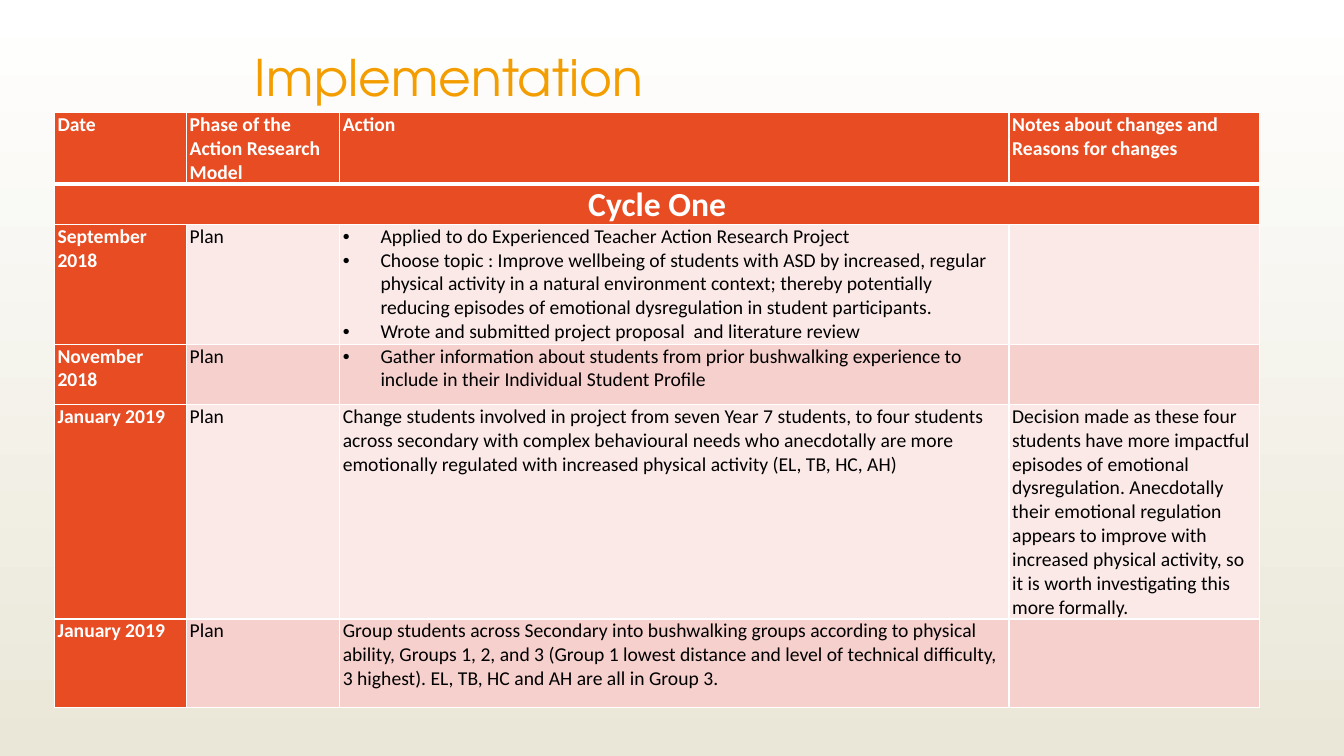
from dataclasses import dataclass

from lxml import etree
from pptx import Presentation
from pptx.dml.color import RGBColor
from pptx.enum.text import MSO_ANCHOR, PP_ALIGN
from pptx.oxml.ns import qn
from pptx.util import Cm, Pt

TOP = MSO_ANCHOR.TOP
LEFT, CENTER = PP_ALIGN.LEFT, PP_ALIGN.CENTER


@dataclass(frozen=True)
class Theme:
    title: str = "F49D00"
    accent: str = "E84C22"
    bands: tuple = ("FBE9E8", "F6D0CD")
    text: str = "000000"
    white: str = "FFFFFF"
    backdrop: tuple = ("FFFFFF", "EAE7D8")
    title_font: str = "TeX Gyre Adventor"
    body_font: str = "Calibri"
    title_size: int = 36
    cycle_size: int = 24
    body_size: int = 14


THEME = Theme()

COL_WIDTHS = (3.33, 3.86, 16.87, 6.32)
ROW_HEIGHTS = (1.8, 1.02, 3.02, 1.52, 5.4, 2.23)
HEADERS = ("Date", "Phase of the Action Research Model", "Action",
           "Notes about changes and  Reasons for changes")
# Date, phase, action (a tuple makes a bulleted list), notes
STEPS = (
    ("September 2018", "Plan", (
        "Applied to do Experienced Teacher Action Research Project",
        "Choose topic : Improve wellbeing of students with ASD by increased, "
        "regular physical activity in a natural environment context; thereby "
        "potentially reducing episodes of emotional dysregulation in student "
        "participants.",
        "Wrote and submitted project proposal  and literature review"), ""),
    ("November 2018", "Plan", (
        "Gather information about students from prior bushwalking experience "
        "to include in their Individual Student Profile",), ""),
    ("January 2019", "Plan",
     "Change students involved in project from seven Year 7 students, to four "
     "students across secondary with complex behavioural needs who "
     "anecdotally are more emotionally regulated with increased physical "
     "activity (EL, TB, HC, AH)",
     "Decision made as these four students have more impactful episodes of "
     "emotional dysregulation. Anecdotally their emotional regulation appears "
     "to improve with increased physical activity, so it is worth "
     "investigating this more formally."),
    ("January 2019", "Plan",
     "Group students across Secondary into bushwalking groups according to "
     "physical ability, Groups 1, 2, and 3 (Group 1 lowest distance and level "
     "of technical difficulty, 3 highest). EL, TB, HC and AH are all in "
     "Group 3.", ""),
)


def rgb(value):
    return RGBColor.from_string(value)


def write(tf, text, font=THEME.body_font, size=THEME.body_size,
          color=THEME.text, bold=False, align=LEFT):
    """Write a string, or a tuple of strings as a bulleted list."""
    bulleted = isinstance(text, tuple)
    for i, line in enumerate(text if bulleted else (text,)):
        p = tf.add_paragraph() if i else tf.paragraphs[0]
        p.alignment = align
        if bulleted:
            add_bullet(p)
        r = p.add_run()
        r.text = line
        r.font.name = font
        r.font.size = Pt(size)
        r.font.bold = bold
        r.font.color.rgb = rgb(color)


def add_bullet(p, indent=Cm(0.95)):
    pPr = p._p.get_or_add_pPr()
    pPr.set("marL", str(indent))
    pPr.set("indent", str(-indent))
    etree.SubElement(pPr, qn("a:buFont"), typeface="Arial")
    etree.SubElement(pPr, qn("a:buChar"), char="•")


def set_borders(cell, top=1, bottom=1):
    tcPr = cell._tc.get_or_add_tcPr()
    sides = (("L", 1), ("R", 1), ("T", top), ("B", bottom))
    for i, (side, width) in enumerate(sides):
        ln = etree.Element(qn(f"a:ln{side}"), w=str(Pt(width)))
        fill = etree.SubElement(ln, qn("a:solidFill"))
        etree.SubElement(fill, qn("a:srgbClr"), val=THEME.white)
        tcPr.insert(i, ln)


def fill_cell(cell, text, fill, top=1, bottom=1, **fmt):
    cell.margin_left = cell.margin_right = Cm(0.08)
    cell.margin_top = cell.margin_bottom = 0
    cell.vertical_anchor = TOP
    cell.fill.solid()
    cell.fill.fore_color.rgb = rgb(fill)
    set_borders(cell, top, bottom)
    if text:
        write(cell.text_frame, text, **fmt)


def add_background(s):
    fill = s.background.fill
    fill.gradient()
    fill.gradient_angle = 270
    for stop, color, position in zip(fill.gradient_stops, THEME.backdrop, (0, 1)):
        stop.color.rgb = rgb(color)
        stop.position = position


def add_title(s, x, y, w, h):
    tf = s.shapes.add_textbox(x, y, w, h).text_frame
    tf.word_wrap = True
    tf.vertical_anchor = TOP
    write(tf, "Implementation", font=THEME.title_font,
          size=THEME.title_size, color=THEME.title)


def add_schedule(s, x, y, w, h):
    table = s.shapes.add_table(len(ROW_HEIGHTS), len(COL_WIDTHS),
                               x, y, w, h).table
    # Share the box out in proportion to the column and row sizes
    for col, width in zip(table.columns, COL_WIDTHS):
        col.width = int(w * width / sum(COL_WIDTHS))
    for row, height in zip(table.rows, ROW_HEIGHTS):
        row.height = int(h * height / sum(ROW_HEIGHTS))

    # Heading row
    label = {"color": THEME.white, "bold": True}
    for c, text in enumerate(HEADERS):
        fill_cell(table.cell(0, c), text, THEME.accent, bottom=3, **label)

    # Cycle row across the full width
    for c in range(len(COL_WIDTHS)):
        fill_cell(table.cell(1, c), "", THEME.accent, top=3)
    cycle = table.cell(1, 0)
    cycle.merge(table.cell(1, len(COL_WIDTHS) - 1))
    write(cycle.text_frame, "Cycle One", size=THEME.cycle_size,
          align=CENTER, **label)

    # Steps in alternating bands, with the date as row heading
    for i, (date, *details) in enumerate(STEPS):
        fill_cell(table.cell(i + 2, 0), date, THEME.accent, **label)
        for c, text in enumerate(details, start=1):
            fill_cell(table.cell(i + 2, c), text, THEME.bands[i % 2])


def main():
    prs = Presentation()
    prs.slide_width, prs.slide_height = Cm(33.87), Cm(19.05)
    s = prs.slides.add_slide(prs.slide_layouts[6])
    add_background(s)
    add_title(s, Cm(6.17), Cm(1.04), Cm(24.77), Cm(3.56))
    add_schedule(s, Cm(1.37), Cm(2.84), Cm(30.38), Cm(14.99))
    prs.save("out.pptx")


if __name__ == "__main__":
    main()
